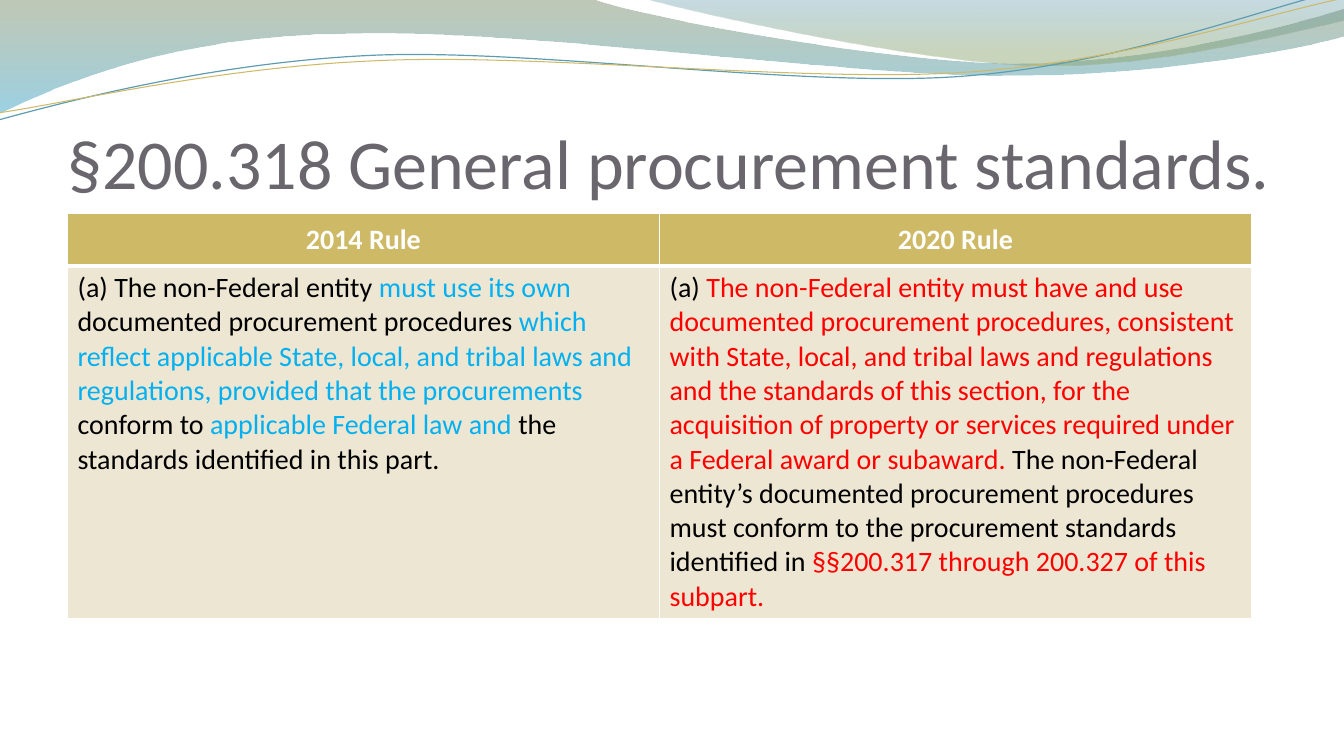
from lxml import etree
from pptx import Presentation
from pptx.dml.color import RGBColor
from pptx.enum.text import MSO_ANCHOR, PP_ALIGN
from pptx.oxml.ns import qn
from pptx.util import Cm, Pt

MIDDLE, BOTTOM = MSO_ANCHOR.MIDDLE, MSO_ANCHOR.BOTTOM
CENTER = PP_ALIGN.CENTER
FONT = "Calibri"
WHITE = RGBColor(0xFF, 0xFF, 0xFF)
BLACK = RGBColor(0x00, 0x00, 0x00)
RED = RGBColor(0xFF, 0x00, 0x00)
SKY = RGBColor(0x00, 0xB0, 0xF0)
GRAY = RGBColor(0x69, 0x67, 0x6D)
GOLD = RGBColor(0xCE, 0xB9, 0x66)
CREAM = RGBColor(0xED, 0xE6, 0xD3)
TEAL = RGBColor(0x5E, 0x9C, 0xB1)
OLIVE = RGBColor(0x74, 0x85, 0x5E)
BLUE = RGBColor(0x4A, 0xAC, 0xCE)
DEEP_TEAL = RGBColor(0x45, 0x88, 0x9F)
SAGE = RGBColor(0x8A, 0xA3, 0x6D)

presentation = Presentation()
presentation.slide_width = Cm(33.87)
presentation.slide_height = Cm(19.05)
slide = presentation.slides.add_slide(presentation.slide_layouts[6])


def draw_curve(start, segments, close):
    anchors = [(Cm(x), Cm(y)) for x, y in [start] + [segment[-2:] for segment in segments]]
    builder = slide.shapes.build_freeform(*anchors[0], scale=1.0)
    builder.add_line_segments(anchors[1:], close=close)
    shape = builder.convert_to_shape()
    shape.shadow.inherit = False
    lines = list(shape._element.spPr.iter(qn("a:lnTo")))
    for line, segment in zip(lines, segments):
        if len(segment) == 6:
            curve = etree.Element(qn("a:cubicBezTo"))
            for x, y in zip(segment[::2], segment[1::2]):
                etree.SubElement(curve, qn("a:pt"), x=str(Cm(x) - shape.left),
                                 y=str(Cm(y) - shape.top))
            line.getparent().replace(line, curve)
    return shape


def style_run(run, color, size, bold=False):
    run.font.name = FONT
    run.font.size = Pt(size)
    run.font.bold = bold
    run.font.color.rgb = color


bands = [
    ((0, -0.03),
     [(14.91, -0.03), (16.1, 0.43, 22.48, 1.6, 25.68, 1.6),
      (28.91, 1.6, 32.46, 0.66, 33.86, 0.23), (33.91, 0.91),
      (33.3, 1.12, 29.46, 1.93, 25.25, 1.91), (21.06, 1.91, 12.93, 0.71, 8.71, 0.86),
      (4.37, 0.89, 1.55, 2.11, -0.03, 2.87)],
     [(0, OLIVE, 45), (100, BLUE, 55)]),
    ((16.23, -0.03),
     [(17.25, 0.28, 23.09, 1.57, 26.04, 1.65), (28.98, 1.75, 32.56, 0.81, 33.86, 0.53),
      (33.86, 0)],
     [(0, DEEP_TEAL, 30), (80, SAGE, 45)]),
]
for start, segments, stops in bands:
    band = draw_curve(start, segments, True)
    band.line.fill.background()
    band.fill.background()
    no_fill = band._element.spPr.find(qn("a:noFill"))
    gradient = etree.Element(qn("a:gradFill"), rotWithShape="1")
    stop_list = etree.SubElement(gradient, qn("a:gsLst"))
    for position, color, opacity in stops:
        stop = etree.SubElement(stop_list, qn("a:gs"), pos=str(position * 1000))
        stop_color = etree.SubElement(stop, qn("a:srgbClr"), val=str(color))
        etree.SubElement(stop_color, qn("a:alpha"), val=str(opacity * 1000))
    etree.SubElement(gradient, qn("a:lin"), ang="5400000", scaled="0")
    band._element.spPr.replace(no_fill, gradient)

waves = [
    ((-0.08, 2.22),
     [(1.59, 1.85, 5.36, 1.03, 9.38, 1.04), (13.4, 1.05, 20.03, 2.36, 24.1, 2.27),
      (28.17, 2.18, 31.84, 0.91, 33.87, 0.55)], TEAL, 0.85),
    ((-0.05, 2.04),
     [(1.56, 1.89, 5.54, 1.14, 9.61, 1.18), (13.65, 1.19, 20.19, 2.24, 24.23, 2.17),
      (28.31, 2.11, 31.92, 1.06, 33.94, 0.75)], GOLD, 0.75),
]
for start, segments, color, width in waves:
    wave = draw_curve(start, segments, False)
    wave.rotation = 357.3
    wave.fill.background()
    wave.line.color.rgb = color
    wave.line.width = Pt(width)

title = slide.shapes.add_textbox(Cm(1.7), Cm(1.96), Cm(31.75), Cm(3.17))
title_frame = title.text_frame
title_frame.word_wrap = True
title_frame.vertical_anchor = BOTTOM
title_frame.margin_left = title_frame.margin_right = title_frame.margin_bottom = 0
title_frame.margin_top = Cm(0.13)
title_frame.text = "§200.318 General procurement standards."
style_run(title_frame.paragraphs[0].runs[0], GRAY, 50)

rule_2014 = [[
    ("(a) The non-Federal entity ", BLACK),
    ("must use its own ", SKY),
    ("documented procurement procedures ", BLACK),
    ("which reflect applicable State, local, and tribal laws and regulations, "
     "provided that the procurements ", SKY),
    ("conform to ", BLACK),
    ("applicable Federal law and ", SKY),
    ("the standards identified in this part.", BLACK),
]]
rule_2020 = [
    [("(a) ", BLACK),
     ("The non-Federal entity must have and use documented procurement procedures, "
      "consistent", RED)],
    [("with State, local, and tribal laws and regulations and the standards of this "
      "section, for the acquisition of property or services required under a Federal "
      "award or subaward.", RED),
     (" The non-Federal entity’s documented procurement procedures must conform to the "
      "procurement standards identified in ", BLACK),
     ("§§200.317 through 200.327 of this subpart.", RED)],
]
rows = [
    [[[("2014 Rule", WHITE)]], [[("2020 Rule", WHITE)]]],
    [rule_2014, rule_2020],
]
table = slide.shapes.add_table(2, 2, Cm(1.7), Cm(5.38), Cm(29.84), Cm(10.21)).table
table.horz_banding = False
table.rows[0].height = Cm(1.32)
table.rows[1].height = Cm(8.89)

for row_index, row in enumerate(rows):
    header = row_index == 0
    for column_index, paragraphs in enumerate(row):
        cell = table.cell(row_index, column_index)
        properties = cell._tc.get_or_add_tcPr()
        for side in ("lnL", "lnR", "lnT", "lnB"):
            thick = side == ("lnB" if header else "lnT")
            border = etree.SubElement(properties, qn("a:" + side), w=str(Pt(3 if thick else 1)))
            border_fill = etree.SubElement(border, qn("a:solidFill"))
            etree.SubElement(border_fill, qn("a:srgbClr"), val=str(WHITE))
        cell.fill.solid()
        cell.fill.fore_color.rgb = GOLD if header else CREAM
        if header:
            cell.vertical_anchor = MIDDLE
        for index, pieces in enumerate(paragraphs):
            frame = cell.text_frame
            paragraph = frame.add_paragraph() if index else frame.paragraphs[0]
            if header:
                paragraph.alignment = CENTER
            for text, color in pieces:
                run = paragraph.add_run()
                run.text = text
                style_run(run, color, 20, header)

presentation.save("out.pptx")
